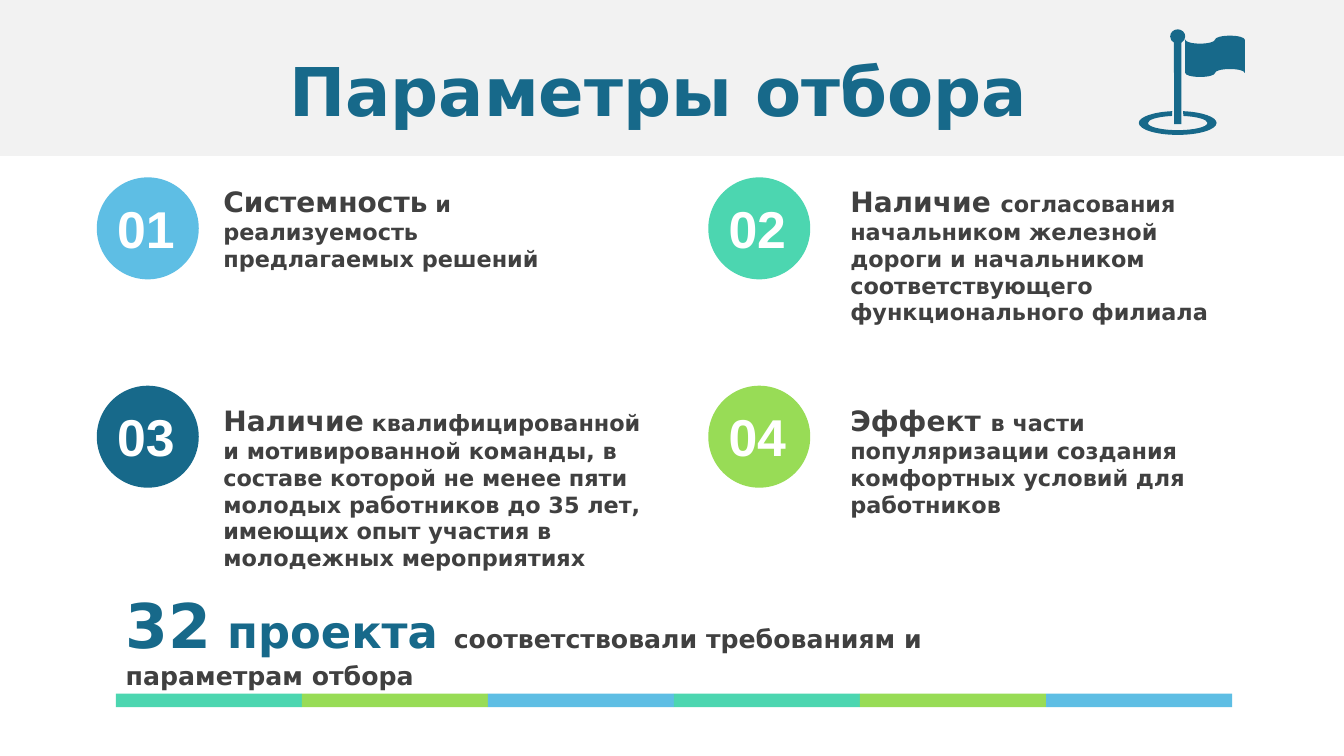
from dataclasses import dataclass
from itertools import cycle, islice, pairwise
from math import cos, radians, sin, tan

from pptx import Presentation
from pptx.dml.color import RGBColor
from pptx.enum.shapes import MSO_SHAPE
from pptx.enum.text import MSO_ANCHOR, PP_ALIGN
from pptx.oxml.ns import qn
from pptx.util import Cm, Pt


@dataclass(frozen=True)
class Theme:
    """Colours, fonts and type sizes of the deck."""
    band: str = "F2F2F2"
    white: str = "FFFFFF"
    text: str = "404040"
    navy: str = "17698A"
    sky: str = "5EBEE4"
    mint: str = "4CD6B0"
    lime: str = "98DC56"
    font: str = "DejaVu Sans"
    number_font: str = "Arial"
    title: int = 48
    number: int = 37
    lead: int = 20
    body: int = 16
    total: int = 44
    unit: int = 32
    note: int = 18


T = Theme()
ITEMS = [
    ("01", T.sky, "Системность", " и реализуемость предлагаемых решений"),
    ("02", T.mint, "Наличие ", "согласования начальником железной дороги и начальником "
     "соответствующего функционального филиала"),
    ("03", T.navy, "Наличие", " квалифицированной и мотивированной команды, в составе "
     "которой не менее пяти молодых работников до 35 лет, имеющих опыт участия "
     "в молодежных мероприятиях"),
    ("04", T.lime, "Эффект ", "в части популяризации создания комфортных условий "
     "для работников"),
]
TEXT_SIZES = [(8.97, 2.49), (10.19, 3.18), (11.1, 4.52), (10.01, 2.49)]
COLUMNS = [(2.44, 2.94), (17.85, 3.33)]
ROWS = [(4.47, 0.05), (9.72, 0.32)]


def set_all(obj, **values):
    """Set several attributes of one object."""
    for name, value in values.items():
        setattr(obj, name, value)


def paint(sp, color):
    """Give a shape a flat fill without line or shadow."""
    sp.shadow.inherit = False
    sp.fill.solid()
    sp.fill.fore_color.rgb = RGBColor.from_string(color)
    sp.line.fill.background()
    return sp


def add_block(s, kind, box, color):
    """Add a flat preset shape in a box given in centimetres."""
    return paint(s.shapes.add_shape(kind, *map(Cm, box)), color)


def add_run(p, text, size, color, font=T.font):
    """Append a bold run to a paragraph."""
    r = p.add_run()
    r.text = text
    set_all(r.font, size=Pt(size), bold=True, name=font)
    r.font.color.rgb = RGBColor.from_string(color)


def add_text(s, box, runs):
    """Add a wrapping text box holding one paragraph of runs."""
    tf = s.shapes.add_textbox(*map(Cm, box)).text_frame
    tf.word_wrap = True
    for text, size, color in runs:
        add_run(tf.paragraphs[0], text, size, color)


def add_header(s, box):
    """Lay the header band behind the title placeholder."""
    x, y, w, h = box
    band = add_block(s, MSO_SHAPE.RECTANGLE, box, T.band)
    s.shapes._spTree.insert(2, band._element)
    title = s.shapes.title
    set_all(title, left=Cm(x), top=Cm(y + 1.32), width=Cm(w - 0.68), height=Cm(2.13))
    tf = title.text_frame
    set_all(tf, vertical_anchor=MSO_ANCHOR.MIDDLE, word_wrap=True)
    p = tf.paragraphs[0]
    set_all(p, alignment=PP_ALIGN.CENTER, line_spacing=0.9)
    add_run(p, "Параметры отбора", T.title, T.navy)


def arc(cx, cy, rx, ry, *angles):
    """Return a start point and the Bezier curves along an ellipse."""
    def at(a, k=0):
        return cx + rx * (cos(a) - k * sin(a)), cy + ry * (sin(a) + k * cos(a))

    turns = [radians(a) for a in angles]
    parts = [(at(turns[0]),)]
    for a, b in pairwise(turns):
        k = 4 / 3 * tan((b - a) / 4)
        parts.append((at(a, k), at(b, -k), at(b)))
    return parts


def add_outline(s, contours, color):
    """Draw closed contours of lines and curves as one shape."""
    fb = s.shapes.build_freeform(*map(Cm, contours[0][0][0]))
    for i, contour in enumerate(contours):
        if i:
            fb.move_to(*map(Cm, contour[0][0]))
        fb.add_line_segments(
            [tuple(map(Cm, pt)) for part in contour[1:] for pt in part], close=True)
    sp = paint(fb.convert_to_shape(), color)
    lines = iter(sp._element.findall(".//" + qn("a:lnTo")))
    for part in (part for contour in contours for part in contour[1:]):
        curve, *others = islice(lines, len(part))
        for line in others:
            curve.append(line[0])
            line.getparent().remove(line)
        if others:
            curve.tag = qn("a:cubicBezTo")


def add_flag(s, box):
    """Draw the flag on its round base."""
    x, y, w, h = box
    cx, base = x + 0.98, y + 2.36
    ring = (arc(cx, base, 0.98, 0.3, -82, 0, 90, 180, 262)
            + arc(cx, base, 0.75, 0.18, 259, 180, 90, 0, -79))
    pole = (arc(cx, y + 0.18, 0.19, 0.18, 120, 180, 270, 360, 420)
            + [((cx + 0.09, base + 0.03),), ((cx - 0.09, base + 0.03),)])
    rx = (w - 1.17) / 4
    near, far = x + 1.17 + rx, x + 1.17 + 3 * rx
    top, bottom = y + 0.26, y + 1.1
    cloth = (arc(near, top, rx, 0.1, 180, 90, 0)
             + arc(far, top, rx, 0.1, 180, 270, 360)[1:]
             + arc(far, bottom, rx, 0.1, 360, 270, 180)
             + arc(near, bottom, rx, 0.1, 0, 90, 180)[1:])
    add_outline(s, [ring, cloth, pole], T.navy)


def add_item(s, box, text_box, number, color, lead, rest):
    """Place a numbered circle and the text beside it."""
    tf = add_block(s, MSO_SHAPE.OVAL, box, color).text_frame
    set_all(tf, margin_left=0, margin_right=Cm(0.1), margin_top=0,
            margin_bottom=Cm(0.05), vertical_anchor=MSO_ANCHOR.MIDDLE, word_wrap=False)
    tf.paragraphs[0].alignment = PP_ALIGN.CENTER
    add_run(tf.paragraphs[0], number, T.number, T.white, T.number_font)
    add_text(s, text_box, [(lead, T.lead, T.text), (rest, T.body, T.text)])


def add_items(s, size):
    """Lay the criteria out in two columns and two rows."""
    for i, (item, text_size) in enumerate(zip(ITEMS, TEXT_SIZES)):
        (x, dx), (y, dy) = COLUMNS[i % 2], ROWS[i // 2]
        add_item(s, (x, y, size, size), (x + dx, y + dy, *text_size), *item)


def add_total(s, box):
    """Write the result line above a strip of coloured bars."""
    x, y, w, h = box
    add_text(s, (x, y, 23.47, 2.13), [
        ("32", T.total, T.navy), (" проекта ", T.unit, T.navy),
        ("соответствовали требованиям и параметрам отбора", T.note, T.text)])
    bar_w, bar_h = w / 6, 0.34
    for i, color in enumerate(islice(cycle([T.mint, T.lime, T.sky]), 6)):
        add_block(s, MSO_SHAPE.RECTANGLE,
                  (x + i * bar_w, y + h - bar_h, bar_w, bar_h), color)


def main():
    """Build and save the presentation."""
    prs = Presentation()
    set_all(prs, slide_width=Cm(33.87), slide_height=Cm(19.05))
    s = prs.slides.add_slide(prs.slide_layouts[5])
    add_header(s, (0, 0, 33.87, 3.93))
    add_items(s, 2.57)
    add_flag(s, (28.7, 0.74, 2.67, 2.64))
    add_total(s, (2.92, 14.66, 28.13, 3.16))
    prs.save("out.pptx")


if __name__ == "__main__":
    main()
